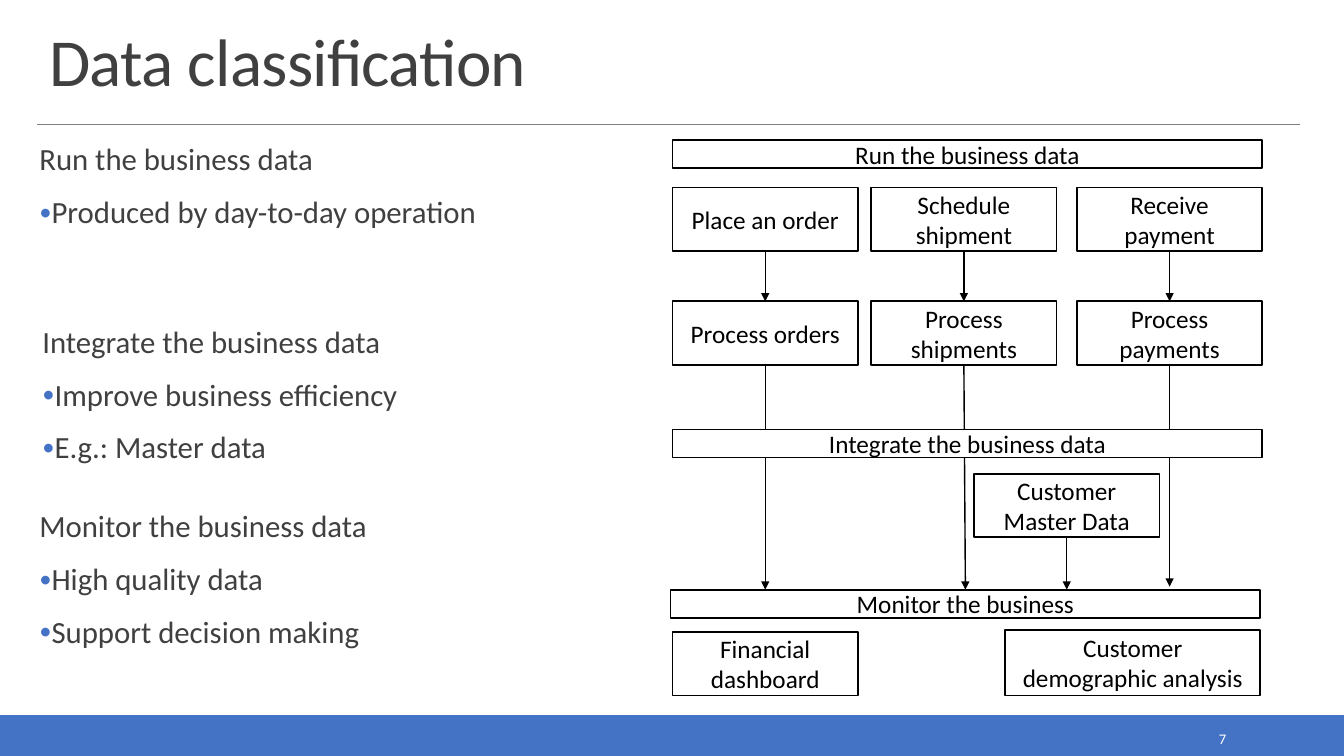
from lxml import etree
from pptx import Presentation
from pptx.dml.color import RGBColor
from pptx.enum.shapes import MSO_CONNECTOR as Connector, MSO_SHAPE as Shape
from pptx.enum.text import MSO_ANCHOR as Anchor, PP_ALIGN as Align
from pptx.oxml.ns import qn
from pptx.util import Inches, Pt

COLORS = {name: RGBColor.from_string(value) for name, value in {
    "accent": "4472C4", "rule": "808080", "text": "404040",
    "black": "000000", "white": "FFFFFF"}.items()}

COLUMNS = [6.67, 8.64, 10.68]
ROWS = {"run": 1.39, "request": 1.86, "process": 2.99, "integrate": 4.26,
        "master": 4.7, "monitor": 5.85, "report": 6.27}
BOX_WIDTH, BOX_HEIGHT = 1.84, 0.63
BAR_WIDTH, BAR_HEIGHT = 5.85, 0.28
MARGIN = 0.39

presentation = Presentation()
presentation.slide_width = Inches(13.33)
presentation.slide_height = Inches(7.5)
slide = presentation.slides.add_slide(presentation.slide_layouts[6])
shapes = slide.shapes


def write(shape, lines, size, color, align=Align.LEFT, anchor=Anchor.MIDDLE):
    frame = shape.text_frame
    frame.word_wrap = True
    frame.vertical_anchor = anchor
    frame.text = "\n".join(lines)
    for paragraph in frame.paragraphs:
        paragraph.alignment = align
        for run in paragraph.runs:
            run.font.name = "Calibri"
            run.font.size = Pt(size)
            run.font.color.rgb = COLORS[color]
    return frame


def add_line(start, end, color, width):
    line = shapes.add_connector(Connector.STRAIGHT, *map(Inches, start + end))
    line.line.color.rgb = COLORS[color]
    line.line.width = Pt(width)
    etree.SubElement(line._element.spPr, qn("a:effectLst"))
    return line


footer = shapes.add_shape(Shape.RECTANGLE, 0, Inches(7.1), Inches(13.33), Inches(0.4))
footer.shadow.inherit = False
footer.fill.solid()
footer.fill.fore_color.rgb = COLORS["accent"]
footer.line.color.rgb = COLORS["accent"]
footer.line.width = Pt(1.25)

add_line((0.37, 1.23), (12.89, 1.23), "rule", 0.5)

title = shapes.add_textbox(*map(Inches, (MARGIN, 0.2, 12.52, 0.84)))
title_frame = write(title, ["Data classification"], 48, "text", anchor=Anchor.BOTTOM)
title_frame.paragraphs[0].line_spacing = 0.85
title_frame.paragraphs[0].runs[0].font._element.set("spc", "-50")

page_number = shapes.add_textbox(*map(Inches, (10.83, 7.19, 1.43, 0.28)))
write(page_number, ["7"], 10.5, "white", Align.RIGHT)

topics = [
    (MARGIN, 1.39, ["Run the business data", "Produced by day-to-day operation"]),
    (0.42, 3.2, ["Integrate the business data", "Improve business efficiency",
                 "E.g.: Master data"]),
    (MARGIN, 5.03, ["Monitor the business data", "High quality data",
                    "Support decision making"]),
]
for left, top, lines in topics:
    topic = shapes.add_textbox(*map(Inches, (left, top, 5.85, 1.59)))
    frame = write(topic, lines, 22, "text", anchor=Anchor.TOP)
    frame.margin_left = frame.margin_right = 0
    frame.margin_top = frame.margin_bottom = Inches(0.04)
    for index, paragraph in enumerate(frame.paragraphs):
        paragraph.line_spacing = 0.9
        paragraph.space_before = Pt(12)
        paragraph.space_after = Pt(2)
        if index:
            properties = paragraph._p.get_or_add_pPr()
            properties.set("marL", str(Inches(0.1)))
            properties.set("indent", str(-Inches(0.1)))
            bullet_color = etree.SubElement(properties, qn("a:buClr"))
            etree.SubElement(bullet_color, qn("a:srgbClr"), val=str(COLORS["accent"]))
            etree.SubElement(properties, qn("a:buSzPct"), val="80000")
            etree.SubElement(properties, qn("a:buFont"), typeface="Calibri")
            etree.SubElement(properties, qn("a:buChar"), char="•")

bar_size = (BAR_WIDTH, BAR_HEIGHT)
box_size = (BOX_WIDTH, BOX_HEIGHT)
blocks = [("Run the business data", COLUMNS[0], ROWS["run"], *bar_size)]
for row, labels in [
    ("request", ["Place an order", "Schedule shipment", "Receive payment"]),
    ("process", ["Process orders", "Process shipments", "Process payments"]),
]:
    blocks += [(label, column, ROWS[row], *box_size)
               for label, column in zip(labels, COLUMNS)]
blocks += [
    ("Monitor the business", 6.65, ROWS["monitor"], *bar_size),
    ("Customer Master Data", 9.66, ROWS["master"], *box_size),
    ("Financial dashboard", COLUMNS[0], ROWS["report"], *box_size),
    ("Customer demographic analysis", 9.97, 6.25, 2.53, 0.65),
    ("Integrate the business data", COLUMNS[0], ROWS["integrate"], *bar_size),
]
boxes = {}
for label, *place in blocks:
    box = shapes.add_shape(Shape.RECTANGLE, *map(Inches, place))
    box.shadow.inherit = False
    box.fill.background()
    box.line.color.rgb = COLORS["black"]
    box.line.width = Pt(1.25)
    write(box, [label], 18, "black", Align.CENTER)
    boxes[label] = box

monitor_top = ROWS["monitor"]
arrows = [
    ("Place an order", "Process orders", ROWS["process"]),
    ("Schedule shipment", "Process shipments", ROWS["process"]),
    ("Receive payment", "Process payments", ROWS["process"]),
    ("Process orders", None, monitor_top),
    ("Process shipments", "Monitor the business", monitor_top),
    ("Process payments", None, 5.82),
    ("Customer Master Data", None, monitor_top),
]
for source, target, end_row in arrows:
    box = boxes[source]
    center = (box.left + box.width / 2) / Inches(1)
    bottom = (box.top + box.height) / Inches(1)
    arrow = add_line((center, bottom), (center, end_row), "black", 1)
    arrow.begin_connect(box, 2)
    if target:
        arrow.end_connect(boxes[target], 0)
    etree.SubElement(arrow.line._get_or_add_ln(), qn("a:tailEnd"), type="triangle")

integrate_bar = boxes["Integrate the business data"]
integrate_bar.fill.solid()
integrate_bar.fill.fore_color.rgb = COLORS["white"]
shapes._spTree.append(integrate_bar._element)

presentation.save("out.pptx")
